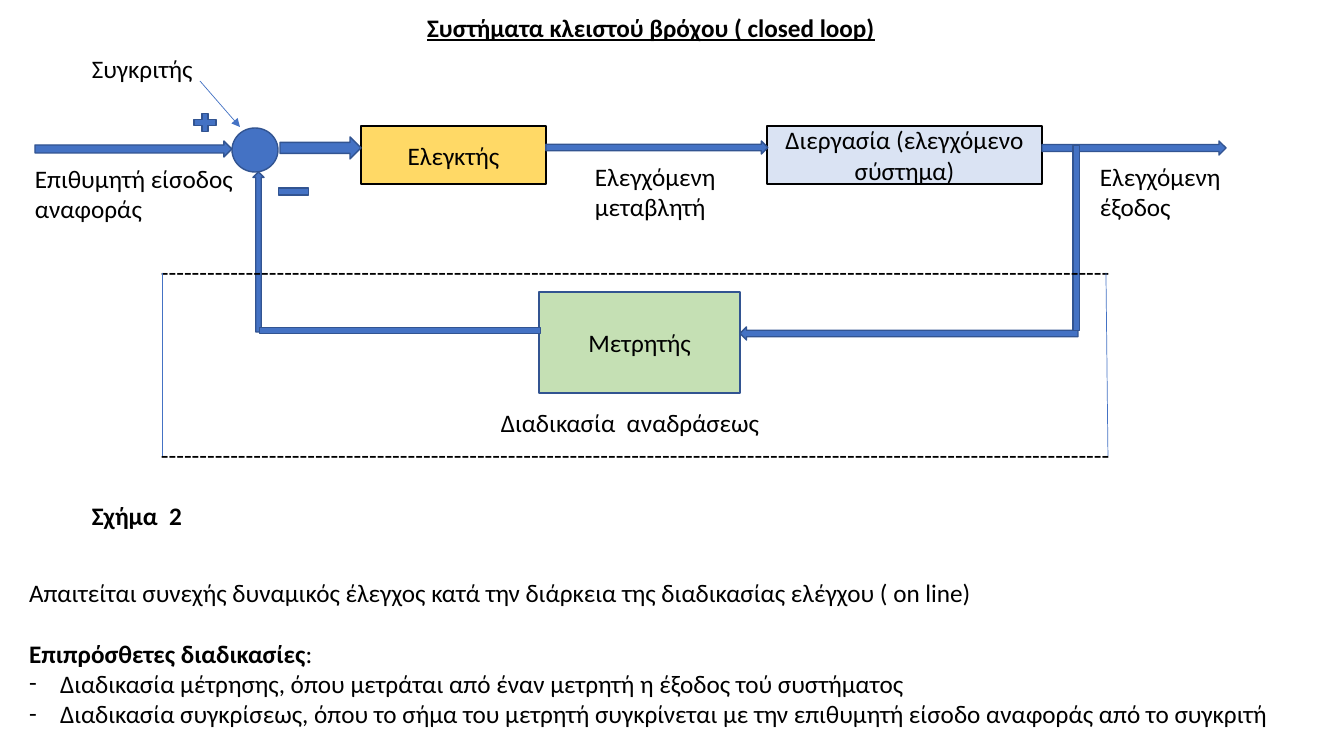
from dataclasses import dataclass
from typing import Optional

import lxml.etree
import pptx
import pptx.dml.color
import pptx.enum.shapes
import pptx.enum.text
import pptx.oxml.ns
import pptx.util

EMU_PER_PX = 914400 / 100.8
SHAPE = pptx.enum.shapes.MSO_SHAPE
ALIGN = pptx.enum.text.PP_ALIGN
ANCHOR = pptx.enum.text.MSO_ANCHOR
qn = pptx.oxml.ns.qn


@dataclass(frozen=True)
class Theme:
    font: str = "Calibri"
    size: int = 18
    text: str = "000000"
    signal: str = "4472C4"
    outline: str = "325491"
    controller: str = "FFD966"
    process: str = "DAE3F3"
    meter: str = "C5E0B4"
    block_line: float = 1
    thin_line: float = 0.5


THEME = Theme()


@dataclass(frozen=True)
class Block:
    kind: SHAPE
    x: int
    y: int
    w: int
    h: int
    fill: str = THEME.signal
    line: str = THEME.outline
    text: str = ""
    rotation: int = 0
    adj: Optional[float] = None


@dataclass(frozen=True)
class Label:
    x: int
    y: int
    w: int
    h: int
    lines: tuple[str, ...]
    bold: bool = False


@dataclass(frozen=True)
class Line:
    x1: int
    y1: int
    x2: int
    y2: int
    arrow: bool = False


BLOCKS = [
    # Forward path
    Block(SHAPE.RECTANGLE, 361, 126, 185, 58, THEME.controller, THEME.text, "Ελεγκτής"),
    Block(SHAPE.RECTANGLE, 767, 126, 275, 58, THEME.process, THEME.text,
          "Διεργασία (ελεγχόμενο σύστημα)"),
    Block(SHAPE.RIGHT_ARROW, 35, 141, 197, 16),
    Block(SHAPE.RIGHT_ARROW, 546, 141, 222, 13),
    Block(SHAPE.RIGHT_ARROW, 1042, 141, 184, 14),
    # Feedback path
    Block(SHAPE.RECTANGLE, 539, 292, 201, 101, THEME.meter, text="Μετρητής"),
    Block(SHAPE.LEFT_ARROW, 740, 327, 338, 13),
    Block(SHAPE.OVAL, 232, 128, 46, 44),
    Block(SHAPE.RIGHT_ARROW, 280, 137, 81, 22),
    Block(SHAPE.UP_ARROW, 253, 172, 11, 160),
    Block(SHAPE.MATH_MINUS, 209, 298, 382, 65, adj=0.09),
    Block(SHAPE.MATH_MINUS, 951, 224, 251, 28, rotation=270),
    # Comparator signs
    Block(SHAPE.MATH_PLUS, 190, 110, 30, 25),
    Block(SHAPE.MATH_MINUS, 273, 177, 41, 29),
]

DASHES = ("-" * 123,)
LABELS = [
    Label(25, 158, 295, 72, ("Επιθυμητή είσοδος αναφοράς",)),
    Label(585, 156, 155, 72, ("Ελεγχόμενη", "μεταβλητή")),
    Label(1090, 156, 155, 72, ("Ελεγχόμενη", "έξοδος")),
    Label(82, 48, 128, 40, ("Συγκριτής",)),
    Label(82, 495, 117, 40, ("Σχήμα  2",), bold=True),
    Label(151, 251, 991, 40, DASHES),
    Label(491, 402, 300, 40, ("Διαδικασία  αναδράσεως",)),
    Label(151, 434, 991, 40, DASHES),
]

LINES = [
    Line(162, 273, 162, 456),
    Line(1106, 273, 1108, 456),
    Line(200, 81, 240, 127, arrow=True),
]


def px(n: int) -> pptx.util.Emu:
    return pptx.util.Emu(round(n * EMU_PER_PX))


def rgb(value: str) -> pptx.dml.color.RGBColor:
    return pptx.dml.color.RGBColor.from_string(value)


def add_run(p, text: str, bold: bool = False, underline: bool = False) -> None:
    r = p.add_run()
    r.text = text
    r.font.name = THEME.font
    r.font.size = pptx.util.Pt(THEME.size)
    r.font.color.rgb = rgb(THEME.text)
    r.font.bold = bold
    r.font.underline = underline


def next_paragraph(tf, first: bool):
    return tf.paragraphs[0] if first else tf.add_paragraph()


def add_block(shapes, b: Block) -> None:
    sp = shapes.add_shape(b.kind, px(b.x), px(b.y), px(b.w), px(b.h))
    sp.shadow.inherit = False
    sp.fill.solid()
    sp.fill.fore_color.rgb = rgb(b.fill)
    sp.line.color.rgb = rgb(b.line)
    sp.line.width = pptx.util.Pt(THEME.block_line)
    sp.rotation = b.rotation
    if b.adj is not None:
        sp.adjustments[0] = b.adj
    if b.text:
        tf = sp.text_frame
        tf.word_wrap = True
        tf.vertical_anchor = ANCHOR.MIDDLE
        p = tf.paragraphs[0]
        p.alignment = ALIGN.CENTER
        add_run(p, b.text)


def add_label(shapes, label: Label) -> None:
    sp = shapes.add_textbox(px(label.x), px(label.y), px(label.w), px(label.h))
    tf = sp.text_frame
    tf.word_wrap = True
    for i, text in enumerate(label.lines):
        add_run(next_paragraph(tf, i == 0), text, label.bold)


def add_line(shapes, ln: Line) -> None:
    sp = shapes.add_connector(pptx.enum.shapes.MSO_CONNECTOR.STRAIGHT,
                              px(ln.x1), px(ln.y1), px(ln.x2), px(ln.y2))
    sp.line.color.rgb = rgb(THEME.signal)
    sp.line.width = pptx.util.Pt(THEME.thin_line)
    if ln.arrow:
        lxml.etree.SubElement(sp.line._get_or_add_ln(), qn("a:tailEnd"), type="triangle")
    lxml.etree.SubElement(sp._element.spPr, qn("a:effectLst"))


def place(sp, x: int, y: int, w: int, h: int):
    sp.left, sp.top, sp.width, sp.height = px(x), px(y), px(w), px(h)
    tf = sp.text_frame
    tf.word_wrap = True
    tf.auto_size = pptx.enum.text.MSO_AUTO_SIZE.NONE
    tf.vertical_anchor = ANCHOR.TOP
    return tf


def set_bullet(p, bulleted: bool) -> None:
    pPr = p._p.get_or_add_pPr()
    indent = px(31) if bulleted else 0
    pPr.set("marL", str(indent))
    pPr.set("indent", str(-indent))
    if bulleted:
        lxml.etree.SubElement(pPr, qn("a:buFont"), typeface=THEME.font)
        lxml.etree.SubElement(pPr, qn("a:buChar"), char="-")
    else:
        lxml.etree.SubElement(pPr, qn("a:buNone"))


def fill_body(tf) -> None:
    # Each entry: runs as (text, bold), bulleted, space before in points
    paragraphs = [
        ([("Απαιτείται συνεχής δυναμικός έλεγχος κατά την διάρκεια της διαδικασίας "
           "ελέγχου ( on line)", False)], False, 0),
        ([("Επιπρόσθετες διαδικασίες", True), (":", False)], False, 22),
        ([("Διαδικασία μέτρησης, όπου μετράται από έναν μετρητή η έξοδος τού "
           "συστήματος", False)], True, 0),
        ([("Διαδικασία συγκρίσεως, όπου το σήμα του μετρητή συγκρίνεται με την "
           "επιθυμητή είσοδο αναφοράς από το συγκριτή", False)], True, 0),
    ]
    for i, (runs, bulleted, before) in enumerate(paragraphs):
        p = next_paragraph(tf, i == 0)
        set_bullet(p, bulleted)
        p.space_before = pptx.util.Pt(before)
        for text, bold in runs:
            add_run(p, text, bold)


def main() -> None:
    prs = pptx.Presentation()
    prs.slide_width, prs.slide_height = px(1344), px(756)
    slide = prs.slides.add_slide(prs.slide_layouts[1])
    shapes = slide.shapes

    # Title
    p = place(shapes.title, 411, 7, 480, 40).paragraphs[0]
    p.alignment = ALIGN.CENTER
    add_run(p, "Συστήματα κλειστού βρόχου ( closed loop)", bold=True, underline=True)

    # Control loop diagram
    for block in BLOCKS:
        add_block(shapes, block)
    for label in LABELS:
        add_label(shapes, label)
    for line in LINES:
        add_line(shapes, line)

    # Explanation below the diagram
    fill_body(place(slide.placeholders[1], 19, 572, 1290, 163))
    prs.save("out.pptx")


if __name__ == "__main__":
    main()
